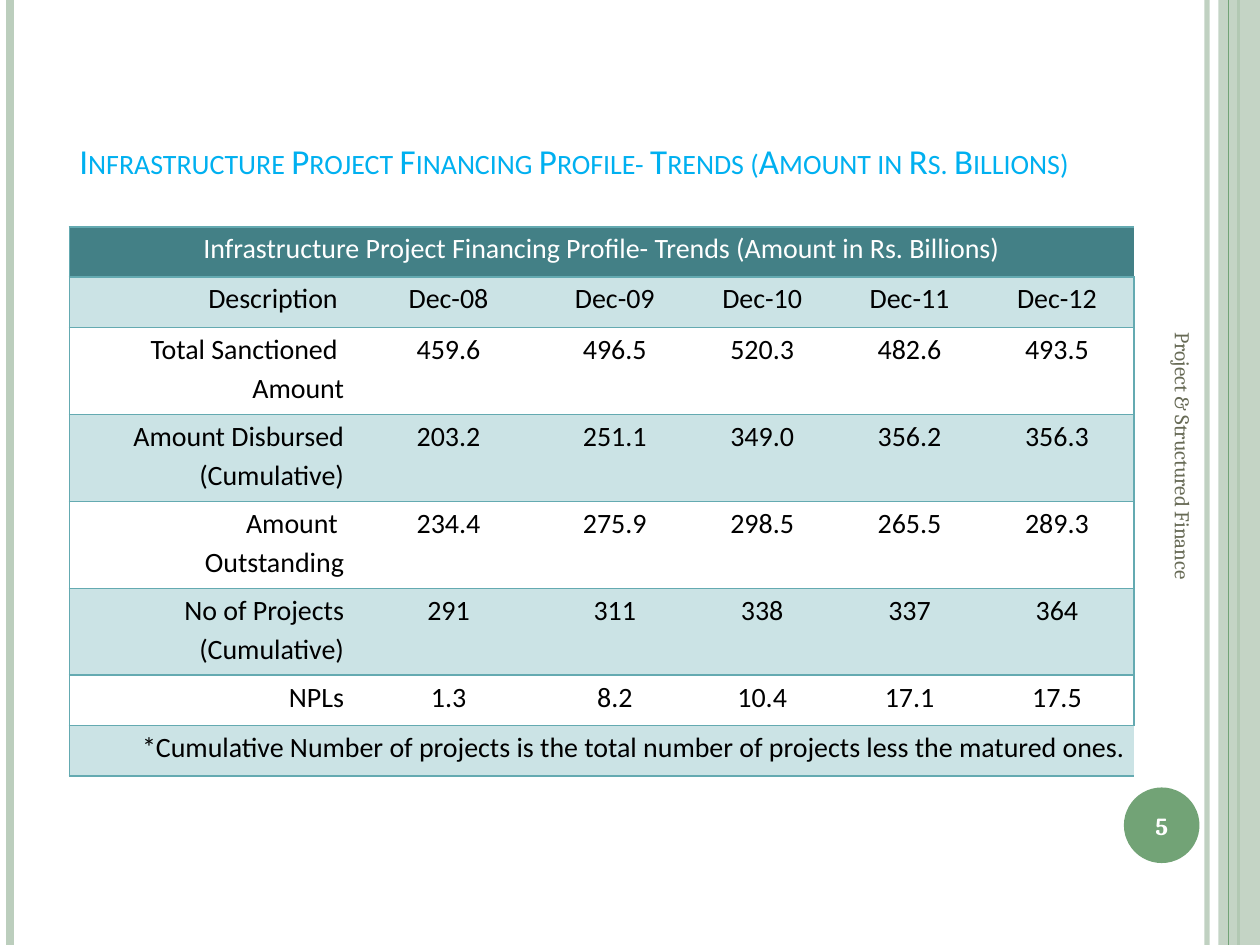
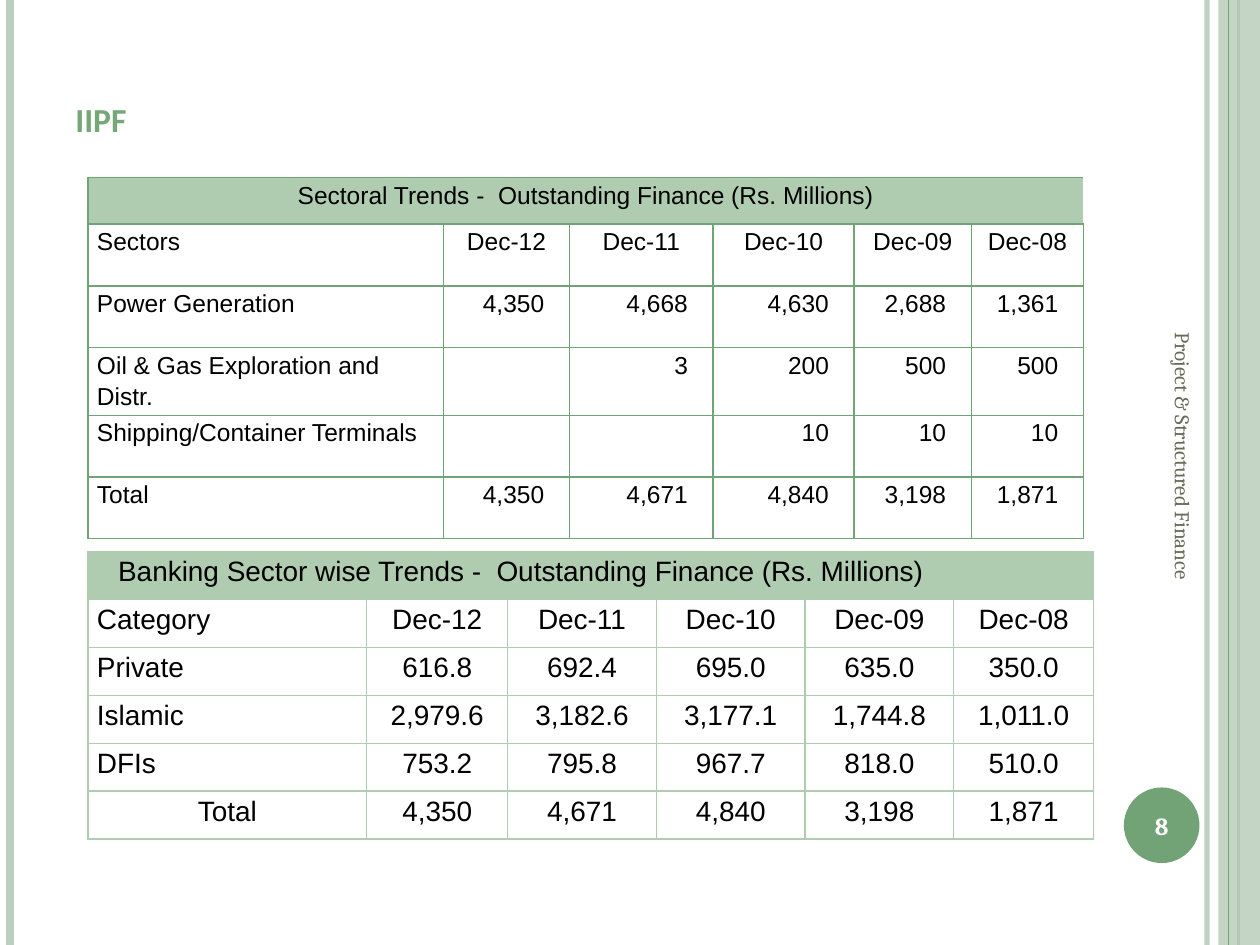
"""Build two slides of infrastructure finance tables with a shared green frame."""
from lxml.etree import SubElement
from pptx import Presentation
from pptx.dml.color import RGBColor
from pptx.enum.shapes import MSO_CONNECTOR as Line, MSO_SHAPE as Shape
from pptx.enum.text import MSO_ANCHOR as Anchor, PP_ALIGN as Align
from pptx.oxml.ns import qn
from pptx.util import Inches, Pt

COLORS = {
    "white": "FFFFFF", "black": "000000", "green": "72A376", "pale": "BCCEBD",
    "sage": "B0CCB0", "title_green": "76A776", "title_blue": "00B0F0",
    "teal": "438086", "teal_edge": "64AAB1", "teal_band": "CBE3E5", "olive": "676A55",
}
PAGE_WIDTH, PAGE_HEIGHT = 10, 7.5
FOOTER = "Project & Structured Finance"
PLAIN_TABLE_STYLE = "{2D5ABB26-0587-4C30-8999-92F81FD0307C}"
RULES_BEHIND_BAND = [(9.58, "pale", 3, 93), (0.08, "pale", 4.5, 100), (9.83, "green", 1.5, 100)]
RULE_ON_BAND = (9.75, "green", 0.75, 100)

PROFILE = {
    "at": (0.55, 1.8), "cols": [2.25, 1.52, 1.12, 1.22, 1.12, 1.22],
    "heights": [0.4, 0.4, 0.69, 0.69, 0.69, 0.69, 0.4, 0.4],
    "font": "Calibri", "size": 16, "head": "teal", "head_text": "white",
    "band": "teal_band", "edge": "teal_edge", "inner_verticals": False,
    "label_align": Align.RIGHT,
    "rows": [
        ["Infrastructure Project Financing Profile- Trends (Amount in Rs. Billions)"],
        ["Description ", "Dec-08", "Dec-09", "Dec-10", "Dec-11", "Dec-12"],
        ["Total Sanctioned \nAmount", "459.6", "496.5", "520.3", "482.6", "493.5"],
        ["Amount Disbursed (Cumulative)", "203.2", "251.1", "349.0", "356.2", "356.3"],
        ["Amount \nOutstanding", "234.4", "275.9", "298.5", "265.5", "289.3"],
        ["No of Projects\n(Cumulative)", "291", "311", "338", "337", "364"],
        ["NPLs", "1.3", "8.2", "10.4", "17.1", "17.5"],
        ["*Cumulative Number of projects is the total number of projects less the matured ones."],
    ],
}
SECTORS = {
    "at": (0.7, 1.41), "cols": [2.82, 1, 1.14, 1.12, 0.93, 0.89],
    "heights": [0.37] + [0.49] * 5,
    "font": "Arial", "size": 14, "head": "sage", "edge": "green",
    "value_align": Align.RIGHT, "value_inset": 0.2,
    "rows": [
        ["Sectoral Trends -  Outstanding Finance (Rs. Millions)"],
        ["Sectors", "Dec-12", "Dec-11", "Dec-10", "Dec-09", "Dec-08"],
        ["Power Generation", "4,350", "4,668", "4,630", "2,688", "1,361"],
        ["Oil & Gas Exploration and Distr.", "", "3", "200", "500", "500"],
        ["Shipping/Container Terminals", "", "", "10", "10", "10"],
        ["Total", "4,350", "4,671", "4,840", "3,198", "1,871"],
    ],
}
BANKS = {
    "at": (0.7, 4.38), "cols": [2.21, 1.12, 1.18, 1.18, 1.18, 1.11],
    "heights": [0.38] * 6, "head_span": 5,
    "font": "Arial", "size": 16, "head": "sage", "edge": "sage",
    "total_align": Align.CENTER,
    "rows": [
        ["Banking Sector wise Trends -  Outstanding Finance (Rs. Millions)"],
        ["Category", "Dec-12", "Dec-11", "Dec-10", "Dec-09", "Dec-08"],
        ["Private", "616.8", "692.4", "695.0", "635.0", "350.0"],
        ["Islamic", "2,979.6", "3,182.6", "3,177.1", "1,744.8", "1,011.0"],
        ["DFIs", "753.2", "795.8", "967.7", "818.0", "510.0"],
        ["Total", "4,350", "4,671", "4,840", "3,198", "1,871"],
    ],
}
SLIDES = [
    {"title": "Infrastructure Project Financing Profile- Trends (Amount in Rs. Billions)",
     "title_at": (0.47, 0.7, 8.17, 0.79), "number": "5", "tables": [PROFILE],
     "title_format": {"size": 20, "color": "title_blue", "align": Align.CENTER}},
    {"title": "iipf",
     "title_at": (0.5, 0.3, 8.17, 0.87), "number": "8", "tables": [SECTORS, BANKS],
     "title_format": {"size": 24, "color": "title_green", "bold": True}},
]


def rgb(name):
    return RGBColor.from_string(COLORS[name])


def write(frame, text, font="Calibri", size=16, color="black", bold=False,
          align=Align.LEFT, spacing=None, small_caps=False):
    for index, line in enumerate(text.split("\n")):
        paragraph = frame.add_paragraph() if index else frame.paragraphs[0]
        paragraph.alignment = align
        paragraph.line_spacing = spacing
        run = paragraph.add_run()
        run.text = line
        run.font.name, run.font.size, run.font.bold = font, Pt(size), bold
        run.font.color.rgb = rgb(color)
        if small_caps:
            run.font._element.set("cap", "small")


def add_text(slide, box, text, anchor=Anchor.MIDDLE, rotation=0, **text_format):
    holder = slide.shapes.add_textbox(*map(Inches, box))
    holder.rotation = rotation
    holder.text_frame.word_wrap = True
    holder.text_frame.vertical_anchor = anchor
    write(holder.text_frame, text, **text_format)


def set_opacity(fill_parent, percent):
    color = fill_parent.find(".//" + qn("a:srgbClr"))
    SubElement(color, qn("a:alpha"), val=str(percent * 1000))


def add_rule(slide, x, color, width, opacity):
    rule = slide.shapes.add_connector(
        Line.STRAIGHT, Inches(x), 0, Inches(x), Inches(PAGE_HEIGHT))
    rule.line.color.rgb = rgb(color)
    rule.line.width = Pt(width)
    properties = rule._element.spPr
    if opacity < 100:
        set_opacity(properties, opacity)
    SubElement(properties, qn("a:effectLst"))


def add_filled(slide, kind, box, color):
    shape = slide.shapes.add_shape(kind, *map(Inches, box))
    shape.shadow.inherit = False
    shape.fill.solid()
    shape.fill.fore_color.rgb = rgb(color)
    shape.line.fill.background()
    return shape


def add_frame(slide, number):
    for rule in RULES_BEHIND_BAND:
        add_rule(slide, *rule)
    band = add_filled(slide, Shape.RECTANGLE, (9.67, 0, 0.33, PAGE_HEIGHT), "pale")
    set_opacity(band._element.spPr, 87)
    add_rule(slide, *RULE_ON_BAND)
    badge = add_filled(slide, Shape.OVAL, (8.92, 6.25, 0.6, 0.6), "green").text_frame
    badge.margin_left = badge.margin_right = badge.margin_top = badge.margin_bottom = 0
    badge.vertical_anchor = Anchor.MIDDLE
    write(badge, number, font="Cambria", size=14, color="white", bold=True, align=Align.CENTER)
    add_text(slide, (7.64, 4.09, 3.5, 0.4), FOOTER, rotation=90,
             font="Cambria", size=12, color="olive")


def style_cell(cell, edges, edge_color, fill_color):
    cell.margin_left = cell.margin_right = Inches(0.07)
    cell.margin_top = cell.margin_bottom = 0
    properties = cell._tc.get_or_add_tcPr()
    for edge in edges:
        border = SubElement(properties, qn("a:ln" + edge), w=str(Pt(1)))
        SubElement(SubElement(border, qn("a:solidFill")), qn("a:srgbClr"),
                   val=COLORS[edge_color])
    cell.fill.solid()
    cell.fill.fore_color.rgb = rgb(fill_color)


def cell_align(spec, row, column):
    last_row = len(spec["rows"]) - 1
    if row == 0:
        return Align.CENTER
    if column == 0:
        label_align = spec.get("label_align", Align.LEFT)
        return spec.get("total_align", label_align) if row == last_row else label_align
    return spec.get("value_align", Align.CENTER) if row > 1 else Align.CENTER


def add_data_table(slide, spec):
    rows, cols, heights = spec["rows"], spec["cols"], spec["heights"]
    box = (*spec["at"], sum(cols), sum(heights))
    frame = slide.shapes.add_table(len(rows), len(cols), *map(Inches, box))
    table = frame.table
    table.first_row = table.horz_banding = False
    table._tbl.tblPr.find(qn("a:tableStyleId")).text = PLAIN_TABLE_STYLE
    for column, width in zip(table.columns, cols):
        column.width = Inches(width)
    last = len(cols) - 1
    for r, entries in enumerate(rows):
        table.rows[r].height = Inches(heights[r])
        fill = spec["head"] if r == 0 else spec.get("band", "white") if r % 2 else "white"
        for c in range(len(cols)):
            verticals = spec.get("inner_verticals", True) and len(entries) > 1
            edges = [edge for edge, shown in (("L", verticals or c == 0),
                                              ("R", verticals or c == last),
                                              ("T", True), ("B", True)) if shown]
            style_cell(table.cell(r, c), edges, spec["edge"], fill)
        if len(entries) == 1:
            span = spec.get("head_span", len(cols))
            table.cell(r, 0).merge(table.cell(r, span - 1))
        for c, entry in enumerate(entries):
            cell = table.cell(r, c)
            if r > 1 and c > 0:
                cell.margin_right = Inches(spec.get("value_inset", 0.07))
            if entry:
                write(cell.text_frame, entry, font=spec["font"], size=spec["size"],
                      color=spec.get("head_text", "black") if r == 0 else "black",
                      align=cell_align(spec, r, c), spacing=1.15)


def main():
    deck = Presentation()
    deck.slide_width, deck.slide_height = Inches(PAGE_WIDTH), Inches(PAGE_HEIGHT)
    for content in SLIDES:
        slide = deck.slides.add_slide(deck.slide_layouts[6])
        add_frame(slide, content["number"])
        add_text(slide, content["title_at"], content["title"], anchor=Anchor.BOTTOM,
                 small_caps=True, **content["title_format"])
        for spec in content["tables"]:
            add_data_table(slide, spec)
    deck.save("out.pptx")


if __name__ == "__main__":
    main()
